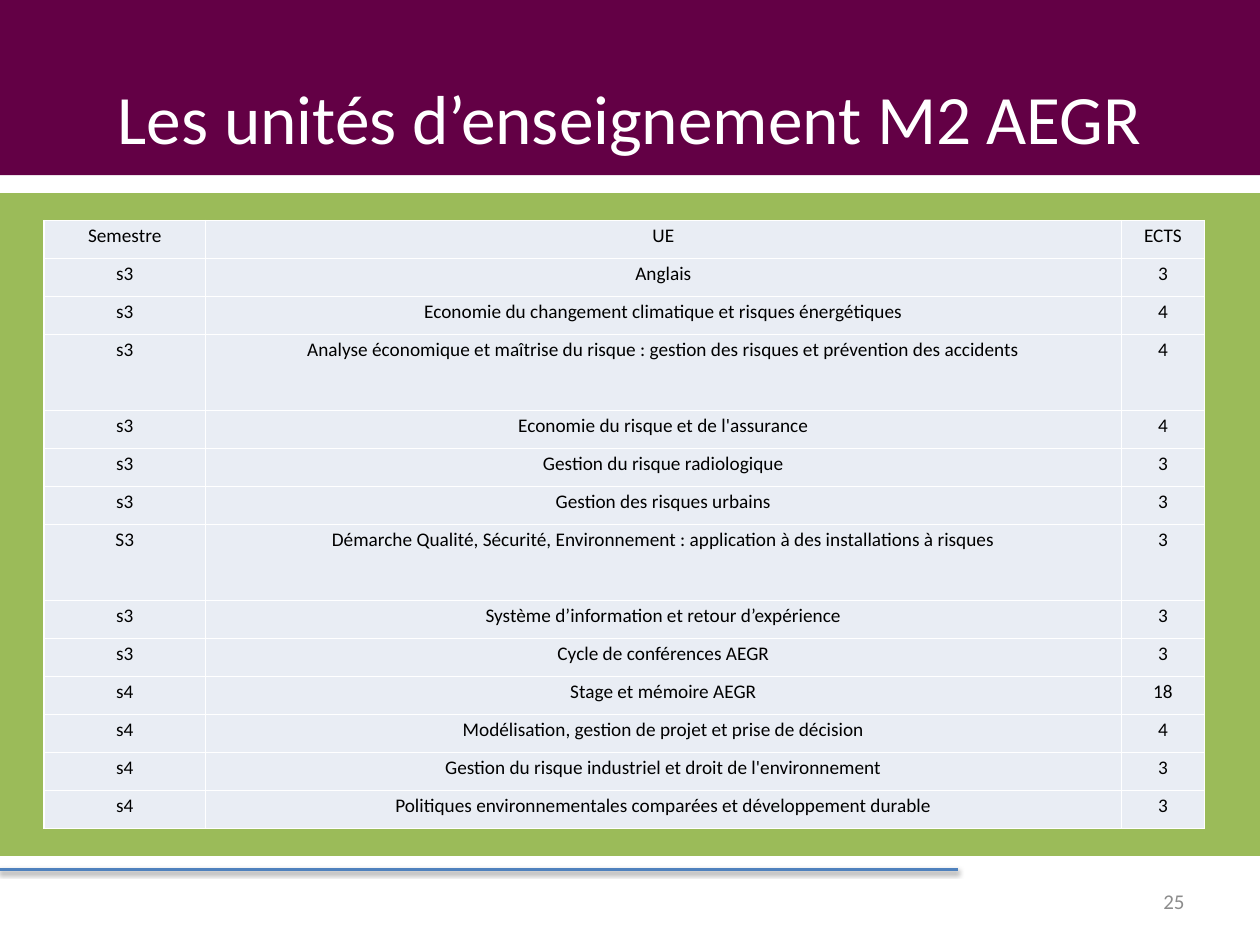
from lxml.etree import SubElement
from pptx import Presentation
from pptx.dml.color import RGBColor
from pptx.enum.shapes import MSO_CONNECTOR, MSO_SHAPE
from pptx.enum.text import MSO_ANCHOR, MSO_AUTO_SIZE, PP_ALIGN
from pptx.oxml import parse_xml
from pptx.oxml.ns import nsdecls, qn
from pptx.util import Inches, Pt

PLUM, GREEN, BLUE = "630045", "9BBB59", "4F81BD"
WHITE, BLACK, GREY, PALE = "FFFFFF", "000000", "8C8C8C", "E9EDF4"
FONT = "Calibri"

COLUMN_WIDTHS = [1.28, 7.27, 0.66]
TALL_ROWS = {3, 7}
COURSES = [
    ("Semestre", "UE", "ECTS"),
    ("s3", "Anglais", "3"),
    ("s3", "Economie du changement climatique et risques énergétiques", "4"),
    ("s3", "Analyse économique et maîtrise du risque : gestion des risques "
           "et prévention des accidents", "4"),
    ("s3", "Economie du risque et de l'assurance", "4"),
    ("s3", "Gestion du risque radiologique", "3"),
    ("s3", "Gestion des risques urbains", "3"),
    ("S3", "Démarche Qualité, Sécurité, Environnement : application à des "
           "installations à risques", "3"),
    ("s3", "Système d’information et retour d’expérience", "3"),
    ("s3", "Cycle de conférences AEGR", "3"),
    ("s4", "Stage et mémoire AEGR", "18"),
    ("s4", "Modélisation, gestion de projet et prise de décision", "4"),
    ("s4", "Gestion du risque industriel et droit de l'environnement", "3"),
    ("s4", "Politiques environnementales comparées et développement durable", "3"),
]


def rgb(value):
    return RGBColor.from_string(value)


def set_all(target, values):
    for name, value in values.items():
        setattr(target, name, value)


def write(frame, text, size, color, align, **spacing):
    frame.text = text
    paragraph = frame.paragraphs[0]
    set_all(paragraph, {"alignment": align, **spacing})
    font = paragraph.runs[0].font
    set_all(font, {"name": FONT, "size": Pt(size)})
    font.color.rgb = rgb(color)


def add_band(slide, box, color):
    band = slide.shapes.add_shape(MSO_SHAPE.RECTANGLE, *map(Inches, box))
    band.shadow.inherit = False
    band.fill.solid()
    band.fill.fore_color.rgb = rgb(color)
    band.line.fill.background()
    return band


def add_header(slide, box, title_box):
    add_band(slide, box, PLUM)
    title = slide.shapes.title
    # Bring the title in front of its band
    title.element.getparent().append(title.element)
    left, top, width, height = map(Inches, title_box)
    set_all(title, {"left": left, "top": top, "width": width, "height": height})
    write(title.text_frame, "Les unités d’enseignement M2 AEGR", 39.6, WHITE,
          PP_ALIGN.CENTER)
    set_all(title.text_frame, {"vertical_anchor": MSO_ANCHOR.MIDDLE,
                               "auto_size": MSO_AUTO_SIZE.NONE,
                               "word_wrap": True})


def add_panel(slide, box):
    panel = add_band(slide, box, GREEN)
    panel.line.color.rgb = rgb(GREEN)
    panel.line.width = Pt(2)


def set_borders(cell, color, width):
    properties = cell._tc.get_or_add_tcPr()
    for index, side in enumerate(("lnL", "lnR", "lnT", "lnB")):
        border = parse_xml(
            f'<a:{side} {nsdecls("a")} w="{Pt(width)}"><a:solidFill>'
            f'<a:srgbClr val="{color}"/></a:solidFill></a:{side}>')
        properties.insert(index, border)


def format_cell(cell, text):
    write(cell.text_frame, text, 11, BLACK, PP_ALIGN.CENTER,
          line_spacing=1.15, space_before=Pt(1), space_after=Pt(2.4))
    set_all(cell, {"margin_left": Inches(0.05), "margin_right": Inches(0.05),
                   "margin_top": 0, "margin_bottom": 0,
                   "vertical_anchor": MSO_ANCHOR.TOP})
    cell.fill.solid()
    cell.fill.fore_color.rgb = rgb(PALE)
    set_borders(cell, WHITE, 1)


def add_course_table(slide, box):
    table = slide.shapes.add_table(len(COURSES), len(COLUMN_WIDTHS),
                                   *map(Inches, box)).table
    set_all(table, {"first_row": False, "horz_banding": False})
    for column, width in zip(table.columns, COLUMN_WIDTHS):
        column.width = Inches(width)
    # Tall rows take two units of height
    unit = box[3] / (len(COURSES) + len(TALL_ROWS))
    for index, course in enumerate(COURSES):
        row = table.rows[index]
        row.height = Inches(unit * (2 if index in TALL_ROWS else 1))
        for cell, text in zip(row.cells, course):
            format_cell(cell, text)


def add_footer(slide, box, number_box):
    left, top, width, _ = box
    rule = slide.shapes.add_connector(
        MSO_CONNECTOR.STRAIGHT, Inches(left), Inches(top),
        Inches(left + width), Inches(top))
    rule.line.color.rgb = rgb(BLUE)
    rule.line.width = Pt(1.5)
    # Soft shadow below the rule
    effects = SubElement(rule.element.spPr, qn("a:effectLst"))
    shadow = SubElement(effects, qn("a:outerShdw"), blurRad=str(Pt(3.1)),
                        dist=str(Pt(1.6)), dir="5400000", rotWithShape="0")
    shade = SubElement(shadow, qn("a:srgbClr"), val=BLACK)
    SubElement(shade, qn("a:alpha"), val="38000")

    page_number = slide.shapes.add_textbox(*map(Inches, number_box)).text_frame
    set_all(page_number, {"word_wrap": True,
                          "vertical_anchor": MSO_ANCHOR.MIDDLE})
    write(page_number, "25", 12, GREY, PP_ALIGN.RIGHT)


def main():
    deck = Presentation()
    set_all(deck, {"slide_width": Inches(10), "slide_height": Inches(7.5)})
    slide = deck.slides.add_slide(deck.slide_layouts[5])
    add_header(slide, (0, 0, 10, 1.39), (0.5, 0.3, 9, 1.25))
    add_panel(slide, (0, 1.55, 10, 5.23))
    add_course_table(slide, (0.35, 1.75, 9.21, 4.83))
    add_footer(slide, (0, 6.9, 7.6, 0.6), (7.17, 6.95, 2.33, 0.4))
    deck.save("out.pptx")


if __name__ == "__main__":
    main()
